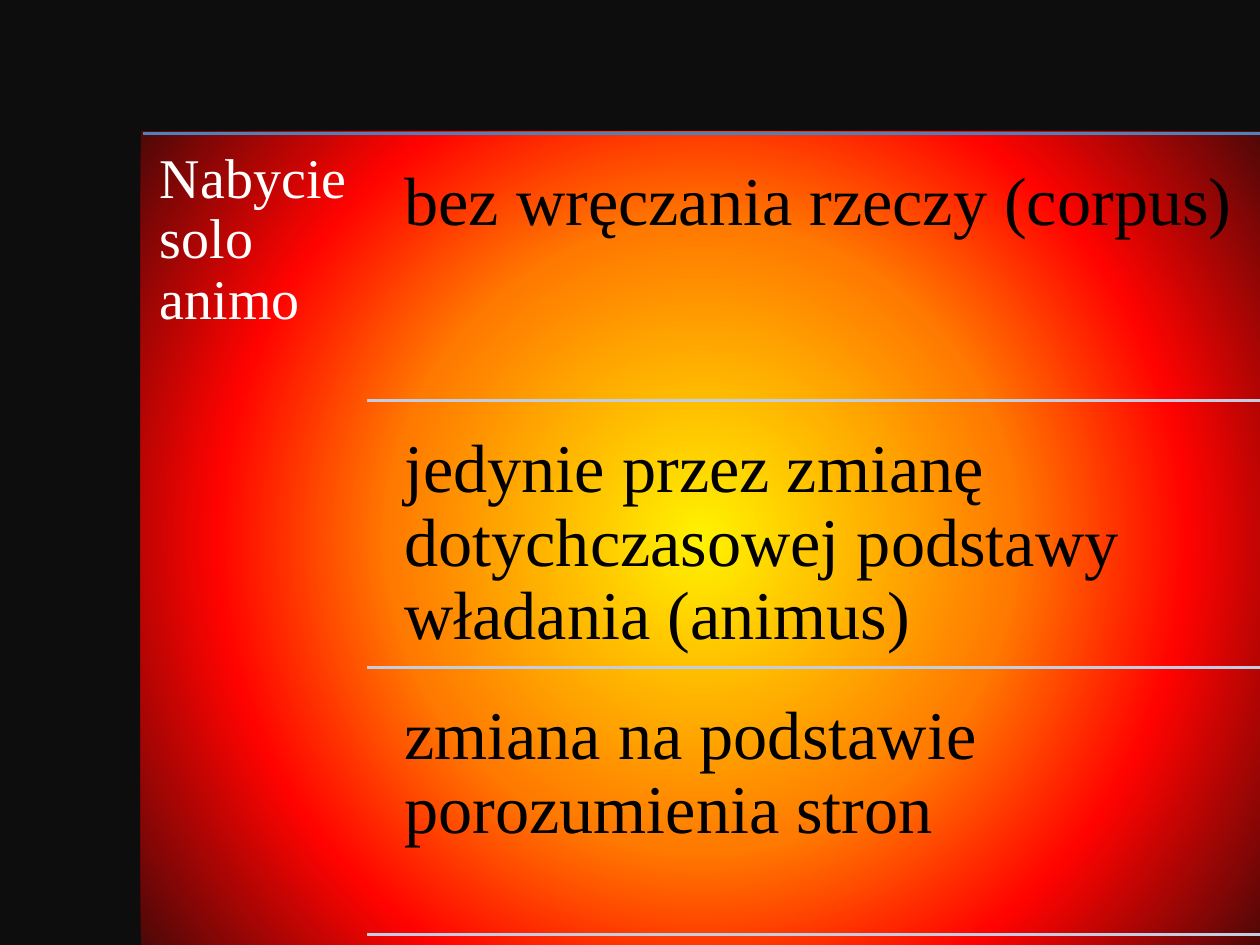
from lxml.etree import SubElement
from pptx import Presentation
from pptx.dml.color import RGBColor
from pptx.enum.shapes import MSO_CONNECTOR, MSO_SHAPE
from pptx.enum.text import MSO_ANCHOR, PP_ALIGN
from pptx.oxml.ns import qn
from pptx.util import Pt

NIGHT = RGBColor(0x0D, 0x0D, 0x0D)
WHITE = RGBColor(0xFF, 0xFF, 0xFF)
BLACK = RGBColor(0x00, 0x00, 0x00)
BLUE = RGBColor(0x4F, 0x81, 0xBD)
PALE_BLUE = RGBColor(0xC2, 0xCD, 0xE1)
YELLOW = RGBColor(0xFF, 0xF2, 0x00)
ORANGE = RGBColor(0xFF, 0x7A, 0x00)
RED = RGBColor(0xFF, 0x03, 0x00)
MAROON = RGBColor(0x4D, 0x08, 0x08)

GLOW = [(0, YELLOW), (45, ORANGE), (70, RED), (100, MAROON)]
FONT = "Times New Roman"
HEADING = "Nabycie solo animo"
CONDITIONS = [
    "bez wręczania rzeczy (corpus)",
    "jedynie przez zmianę dotychczasowej podstawy władania (animus)",
    "zmiana na podstawie porozumienia stron",
]


def add_text(shapes, text, left, top, width, height, *, size, color, inset):
    box = shapes.add_textbox(Pt(left), Pt(top), Pt(width), Pt(height))
    frame = box.text_frame
    frame.word_wrap = True
    frame.vertical_anchor = MSO_ANCHOR.TOP
    frame.margin_left = frame.margin_right = Pt(inset)
    frame.margin_top = frame.margin_bottom = Pt(inset)
    paragraph = frame.paragraphs[0]
    paragraph.alignment = PP_ALIGN.LEFT
    paragraph.line_spacing = 0.9
    run = paragraph.add_run()
    run.text = text
    run.font.name = FONT
    run.font.size = Pt(size)
    run.font.color.rgb = color


def add_rule(shapes, left, right, y, color):
    rule = shapes.add_connector(MSO_CONNECTOR.STRAIGHT, Pt(left), Pt(y), Pt(right), Pt(y))
    rule.line.color.rgb = color
    rule.line.width = Pt(2)
    SubElement(rule._element.spPr, qn("a:effectLst"))


def add_glow_panel(shapes, left, top, width, height):
    panel = shapes.add_shape(MSO_SHAPE.RECTANGLE, Pt(left), Pt(top), Pt(width), Pt(height))
    panel.shadow.inherit = False
    panel.line.fill.background()
    panel.fill.gradient()
    gradient = panel._element.spPr.find(qn("a:gradFill"))
    for child in list(gradient):
        gradient.remove(child)
    stops = SubElement(gradient, qn("a:gsLst"))
    for position, color in GLOW:
        stop = SubElement(stops, qn("a:gs"), pos=str(position * 1000))
        SubElement(stop, qn("a:srgbClr"), val=str(color))
    circle = SubElement(gradient, qn("a:path"), path="circle")
    SubElement(circle, qn("a:fillToRect"), l="50000", t="50000", r="50000", b="50000")


def add_conditions(shapes, left, top, width, height):
    right = left + width
    heading_width = width * 0.2
    rule_left = left + heading_width
    text_left = rule_left + 10
    gap = 7.3
    row_height = (height - gap) / len(CONDITIONS)

    add_rule(shapes, left, right, top, BLUE)
    add_text(shapes, HEADING, left, top, heading_width, height,
             size=32, color=WHITE, inset=9.4)
    for row, condition in enumerate(CONDITIONS):
        row_top = top + row * row_height
        add_text(shapes, condition, text_left, row_top + gap,
                 right - text_left, row_height - gap,
                 size=39, color=BLACK, inset=11.5)
        add_rule(shapes, rule_left, right, row_top + row_height, PALE_BLUE)


def main():
    presentation = Presentation()
    presentation.slide_width = Pt(720)
    presentation.slide_height = Pt(540)
    slide = presentation.slides.add_slide(presentation.slide_layouts[6])
    slide.background.fill.solid()
    slide.background.fill.fore_color.rgb = NIGHT
    add_glow_panel(slide.shapes, 80.6, 74.9, 640.8, 465.1)
    diagram = slide.shapes.add_group_shape()
    add_conditions(diagram.shapes, 82, 76.3, 638, 465.1)
    presentation.save("out.pptx")


if __name__ == "__main__":
    main()
